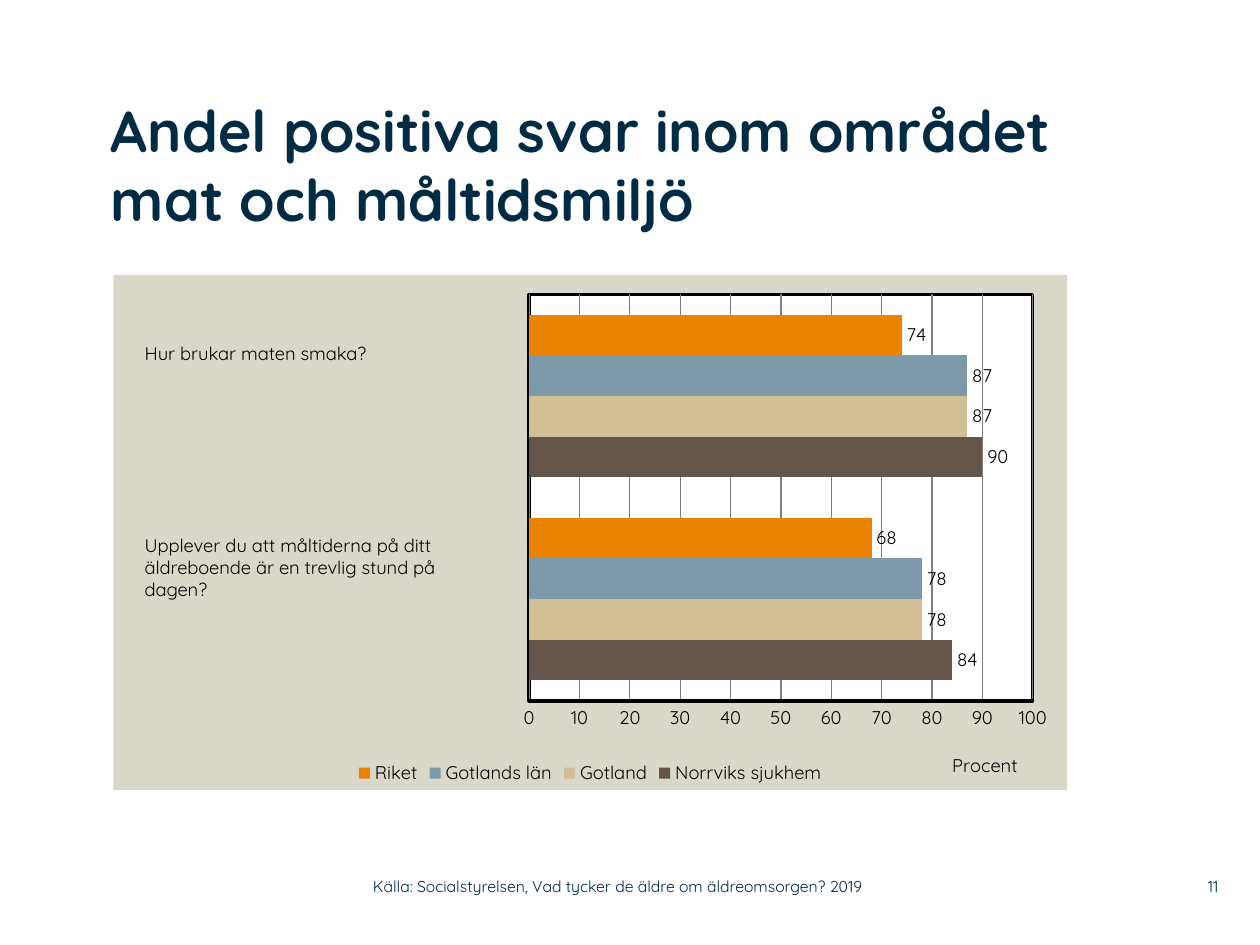
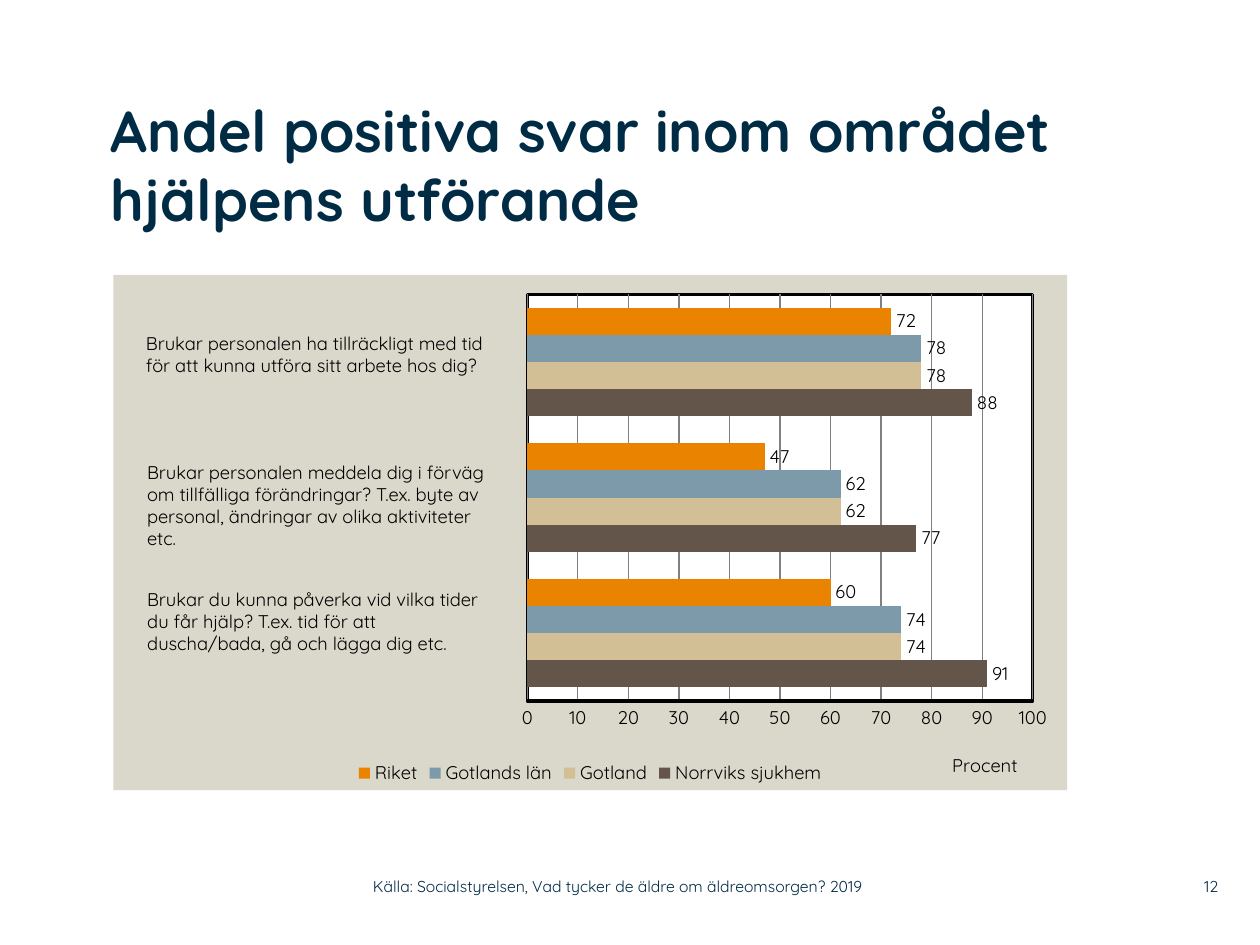
"""Builds two survey slides with bar charts of positive answers in care for older people."""
from dataclasses import dataclass

from pptx import Presentation
from pptx.chart.data import CategoryChartData
from pptx.dml.color import RGBColor as Rgb
from pptx.enum.chart import XL_CHART_TYPE as ChartType
from pptx.enum.chart import XL_LABEL_POSITION as LabelPos
from pptx.enum.chart import XL_LEGEND_POSITION as LegendPos
from pptx.enum.chart import XL_TICK_MARK as TickMark
from pptx.enum.text import MSO_ANCHOR as Anchor
from pptx.enum.text import PP_ALIGN as Align
from pptx.oxml import parse_xml
from pptx.oxml.ns import nsdecls, qn
from pptx.util import Pt


@dataclass(frozen=True)
class Theme:
    font: str = "Quicksand"
    navy: str = "002B45"
    black: str = "000000"
    white: str = "FFFFFF"
    panel: str = "DAD7CB"
    grid: str = "808080"
    title_size: float = 33
    body_size: float = 10.5
    footer_size: float = 9


THEME = Theme()
AREA_COLOURS = {
    "Norrviks sjukhem": "635549",
    "Gotland": "D3BF96",
    "Gotlands län": "7D9AAA",
    "Riket": "E98300",
}
SOURCE = "Källa: Socialstyrelsen, Vad tycker de äldre om äldreomsorgen? 2019"
PAGES = [
    {
        "number": "11",
        "title": "Andel positiva svar inom området mat och måltidsmiljö",
        "title_width": 606,
        "plot_x": 0.436,
        "scores": [(84, 90), (78, 87), (78, 87), (68, 74)],
        "questions": [
            (75.6, 192.25, 213.8, 20, "Hur brukar maten smaka?"),
            (75.6, 301.7, 211, 45.4,
             "Upplever du att måltiderna på ditt äldreboende är en trevlig stund på\ndagen?"),
        ],
    },
    {
        "number": "12",
        "title": "Andel positiva svar inom området hjälpens utförande",
        "title_width": 547,
        "plot_x": 0.434,
        "scores": [(91, 77, 88), (74, 62, 78), (74, 62, 78), (60, 47, 72)],
        "questions": [
            (76.3, 186.5, 215.3, 32.4,
             "Brukar personalen ha tillräckligt med tid\nför att kunna utföra sitt arbete hos dig?"),
            (77, 260, 213.8, 58.3,
             "Brukar personalen meddela dig i förväg om tillfälliga förändringar? "
             "T.ex. byte av personal, ändringar av olika aktiviteter etc."),
            (77, 332.6, 213.8, 45.4,
             "Brukar du kunna påverka vid vilka tider\ndu får hjälp? T.ex. tid för att\n"
             "duscha/bada, gå och lägga dig etc."),
        ],
    },
]


def write_text(slide, text, left, top, width, height, size=THEME.body_size, colour=THEME.black,
               bold=False, align=Align.LEFT, anchor=Anchor.TOP, inset=True):
    frame = slide.shapes.add_textbox(Pt(left), Pt(top), Pt(width), Pt(height)).text_frame
    frame.word_wrap = True
    frame.vertical_anchor = anchor
    if not inset:
        frame.margin_left = frame.margin_top = frame.margin_right = frame.margin_bottom = 0
    frame.text = text
    for paragraph in frame.paragraphs:
        paragraph.alignment = align
        font = paragraph.runs[0].font
        font.name, font.size, font.bold = THEME.font, Pt(size), bold
        font.color.rgb = Rgb.from_string(colour)


def place_in_chart(parent, index, **settings):
    for layout in parent.findall(qn("c:layout")):
        parent.remove(layout)
    values = "".join(f'<c:{key} val="{value}"/>' for key, value in settings.items())
    parent.insert(index, parse_xml(
        f'<c:layout {nsdecls("c")}><c:manualLayout>{values}</c:manualLayout></c:layout>'))


deck = Presentation()
deck.slide_width, deck.slide_height = Pt(720), Pt(540)

for page in PAGES:
    slide = deck.slides.add_slide(deck.slide_layouts[6])

    answers = CategoryChartData()
    answers.categories = [str(n + 1) for n in range(len(page["questions"]))]
    for area, scores in zip(AREA_COLOURS, page["scores"]):
        answers.add_series(area, scores)
    chart = slide.shapes.add_chart(ChartType.BAR_CLUSTERED, Pt(64.8), Pt(157), Pt(545),
                                   Pt(294.5), answers).chart
    chart.has_title = False
    chart.font.name, chart.font.size = THEME.font, Pt(THEME.body_size)
    chart.font.color.rgb = Rgb.from_string(THEME.black)
    chart.has_legend = True
    chart.legend.position = LegendPos.BOTTOM
    chart.legend.include_in_layout = False

    bars = chart.plots[0]
    bars.gap_width, bars.overlap, bars.vary_by_categories = 100, 0, False
    bars.has_data_labels = True
    bars.data_labels.show_value = True
    bars.data_labels.position = LabelPos.OUTSIDE_END
    for series, colour in zip(bars.series, AREA_COLOURS.values()):
        series.format.fill.solid()
        series.format.fill.fore_color.rgb = Rgb.from_string(colour)

    chart.category_axis.visible = False
    percent = chart.value_axis
    percent.minimum_scale, percent.maximum_scale, percent.major_unit = 0, 100, 10
    percent.major_tick_mark = percent.minor_tick_mark = TickMark.NONE
    percent.format.line.color.rgb = Rgb.from_string(THEME.black)
    percent.format.line.width = Pt(2)
    percent.has_major_gridlines = True
    percent.major_gridlines.format.line.color.rgb = Rgb.from_string(THEME.grid)
    percent.major_gridlines.format.line.width = Pt(0.75)
    percent.axis_title.text_frame.text = "Procent"
    unit_font = percent.axis_title.text_frame.paragraphs[0].runs[0].font
    unit_font.name, unit_font.size, unit_font.bold = THEME.font, Pt(THEME.body_size), False
    unit_font.color.rgb = Rgb.from_string(THEME.black)
    place_in_chart(percent.axis_title.element, 1, xMode="edge", yMode="edge", x=0.876, y=0.92)

    plot_area = chart.element.find(".//" + qn("c:plotArea"))
    place_in_chart(plot_area, 0, layoutTarget="inner", xMode="edge", yMode="edge",
                   x=page["plot_x"], y=0.038, w=round(0.964 - page["plot_x"], 3), h=0.789)
    frame_line = (f'<a:ln w="{Pt(2)}"><a:solidFill><a:srgbClr val="{THEME.black}"/>'
                  '</a:solidFill></a:ln>')
    plot_style, panel_style = [
        parse_xml(f'<c:spPr {nsdecls("c", "a")}><a:solidFill><a:srgbClr val="{fill}"/>'
                  f'</a:solidFill>{line}</c:spPr>')
        for fill, line in ((THEME.white, frame_line), (THEME.panel, "<a:ln><a:noFill/></a:ln>"))
    ]
    plot_area.append(plot_style)
    chart.element.find(qn("c:chart")).addnext(panel_style)

    write_text(slide, page["title"], 63.4, 54, page["title_width"], 102,
               size=THEME.title_size, colour=THEME.navy, bold=True, inset=False)
    for left, top, width, height, question in page["questions"]:
        write_text(slide, question, left, top, width, height)
    for text, left, width, align in ((page["number"], 662.4, 33.8, Align.RIGHT),
                                     (SOURCE, 213.1, 319, Align.LEFT)):
        write_text(slide, text, left, 496, width, 21, size=THEME.footer_size,
                   colour=THEME.navy, align=align, anchor=Anchor.MIDDLE, inset=False)

deck.save("out.pptx")
